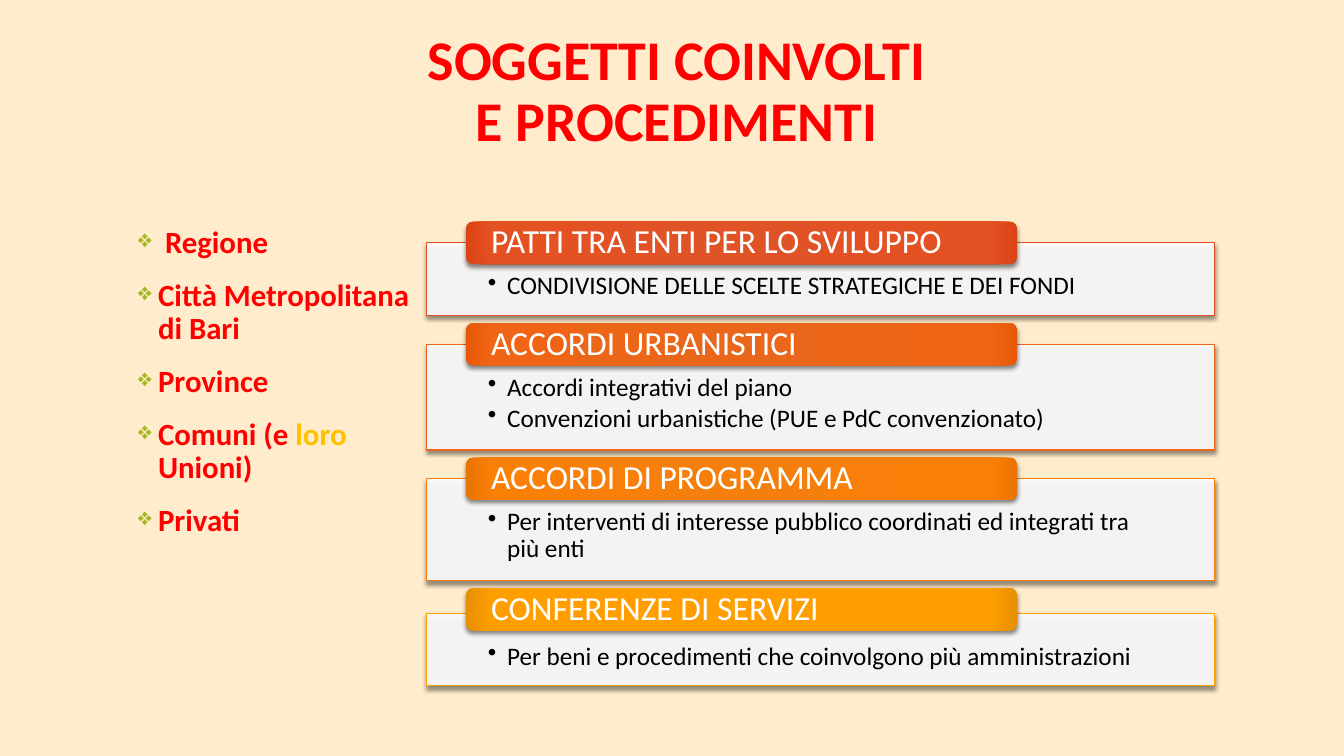
from lxml import etree
from pptx import Presentation
from pptx.dml.color import RGBColor as Rgb
from pptx.enum.shapes import MSO_SHAPE as Shape
from pptx.enum.text import MSO_ANCHOR as Anchor, PP_ALIGN as Align
from pptx.oxml import parse_xml
from pptx.oxml.ns import nsdecls, qn
from pptx.util import Inches, Pt

THEME = {
    "font": "Calibri", "background": "FFECCC", "accent": "FF0000", "highlight": "FFC000",
    "diamond": "A6B727", "panel": "FFFFFF", "ink": "000000", "on_bar": "FFFFFF",
    "title_size": 40, "actor_size": 22, "bar_size": 24, "detail_size": 18,
}

deck = Presentation()
deck.slide_width, deck.slide_height = Inches(13.33), Inches(7.5)
page = deck.slides.add_slide(deck.slide_layouts[6])
page.background.fill.solid()
page.background.fill.fore_color.rgb = Rgb.from_string(THEME["background"])

# One grid unit is one percent of the slide
COL, ROW = deck.slide_width / 100, deck.slide_height / 100


def write(box, lines, size, color, bold=False, insets=(0.1, 0.05), anchor=Anchor.TOP,
          align=Align.LEFT, before=0, after=0, bullet=None):
    """Fill a box with paragraphs; bullet is (sign, colour, percent, margin, hang)."""
    frame = box.text_frame
    frame.text = "\n".join(lines)
    frame.word_wrap, frame.vertical_anchor = True, anchor
    frame.margin_left = frame.margin_right = Inches(insets[0])
    frame.margin_top = frame.margin_bottom = Inches(insets[1])
    for para in frame.paragraphs:
        para.alignment, para.line_spacing = align, 0.9
        para.space_before, para.space_after = Pt(before), Pt(after)
        for span in para.runs:
            span.font.name, span.font.size, span.font.bold = THEME["font"], Pt(size), bold
            span.font.color.rgb = Rgb.from_string(color)
        if bullet:
            sign, sign_color, percent, margin, hang = bullet
            props = para._p.get_or_add_pPr()
            props.set("marL", str(Inches(margin)))
            props.set("indent", str(-Inches(hang)))
            tint = etree.SubElement(props, qn("a:buClr"))
            etree.SubElement(tint, qn("a:srgbClr"), val=sign_color)
            etree.SubElement(props, qn("a:buSzPct"), val=str(percent * 1000))
            etree.SubElement(props, qn("a:buChar"), char=sign)


def add_block(kind, left, top, width, height, fill_xml):
    """Add a preset shape, placed in grid units, with its fill and a soft shadow."""
    block = page.shapes.add_shape(kind, *map(int, (left * COL, top * ROW, width * COL, height * ROW)))
    block.fill.solid()
    block.line.fill.background()
    block.shadow.inherit = False
    props = block._element.spPr
    props.replace(props.find(qn("a:solidFill")), parse_xml(fill_xml))
    props.find(qn("a:effectLst")).append(parse_xml(
        f'<a:outerShdw {nsdecls("a")} blurRad="{Pt(3)}" dist="{Pt(2)}" dir="5400000" rotWithShape="0">'
        '<a:srgbClr val="000000"><a:alpha val="45000"/></a:srgbClr></a:outerShdw>'))
    return block


# Title
title = page.shapes.add_textbox(*map(int, (9.83 * COL, 2.4 * ROW, 81 * COL, 19.73 * ROW)))
write(title, ["SOGGETTI COINVOLTI\vE PROCEDIMENTI"], THEME["title_size"], THEME["accent"],
      bold=True, anchor=Anchor.MIDDLE, align=Align.CENTER)

# Actors on the left
actors = page.shapes.add_textbox(*map(int, (9.15 * COL, 29.33 * ROW, 22.58 * COL, 61.73 * ROW)))
write(actors, [" Regione", "Città Metropolitana di Bari", "Province", "Comuni (e ", "Privati"],
      THEME["actor_size"], THEME["accent"], bold=True, before=14,
      bullet=("❖", THEME["diamond"], 80, 0.25, 0.2))
towns = actors.text_frame.paragraphs[3]
for words, color in (("loro", THEME["highlight"]), (" Unioni)", THEME["accent"])):
    span = towns.add_run()
    span.text = words
    span.font.name, span.font.size, span.font.bold = THEME["font"], Pt(THEME["actor_size"]), True
    span.font.color.rgb = Rgb.from_string(color)

# Procedures: name, gradient colours, panel offset, panel height, details
PROCEDURES = [
    ("PATTI TRA ENTI PER LO SVILUPPO", ("DF5327", "E45122", "DB4313"), 2.8, 9.6,
     ["CONDIVISIONE DELLE SCELTE STRATEGICHE E DEI FONDI"]),
    ("ACCORDI URBANISTICI", ("E9661A", "EF6515", "E75805"), 2.8, 14,
     ["Accordi integrativi del piano", "Convenzioni urbanistiche (PUE e PdC convenzionato)"]),
    ("ACCORDI DI PROGRAMMA", ("F47F0D", "FA7F07", "E97300"), 2.8, 13.47,
     ["Per interventi di interesse pubblico coordinati ed integrati tra più enti"]),
    ("CONFERENZE DI SERVIZI", ("FE9E00", "FE9E00", "E78F00"), 3.33, 9.6,
     ["Per beni e procedimenti che coinvolgono più amministrazioni"]),
]
PANEL_FILL = (f'<a:solidFill {nsdecls("a")}><a:srgbClr val="{THEME["panel"]}">'
              '<a:alpha val="90000"/></a:srgbClr></a:solidFill>')
GAP = 1
top = 29.33
for name, shades, offset, height, details in PROCEDURES:
    # Panel with the details
    panel = add_block(Shape.RECTANGLE, 31.73, top + offset, 58.66, height, PANEL_FILL)
    panel.line.color.rgb = Rgb.from_string(shades[0])
    panel.line.width = Pt(0.79)
    write(panel, details, THEME["detail_size"], THEME["ink"], insets=(0.61, 0.3), after=2.7,
          bullet=("•", THEME["ink"], 100, 0.19, 0.19))
    panel.text_frame.margin_bottom = Inches(0.14)

    # Bar with the name
    stops = "".join(f'<a:gs pos="{place * 1000}"><a:srgbClr val="{shade}"/></a:gs>'
                    for place, shade in zip((0, 90, 100), shades))
    bar = add_block(Shape.ROUNDED_RECTANGLE, 34.66, top, 41.04, 5.6,
                    f'<a:gradFill {nsdecls("a")} rotWithShape="1"><a:gsLst>{stops}</a:gsLst>'
                    '<a:path path="circle"><a:fillToRect l="100000" t="100000" r="100000" b="100000"/>'
                    '</a:path></a:gradFill>')
    write(bar, [name], THEME["bar_size"], THEME["on_bar"], insets=(0.23, 0), anchor=Anchor.MIDDLE)
    top += offset + height + GAP

deck.save("out.pptx")
